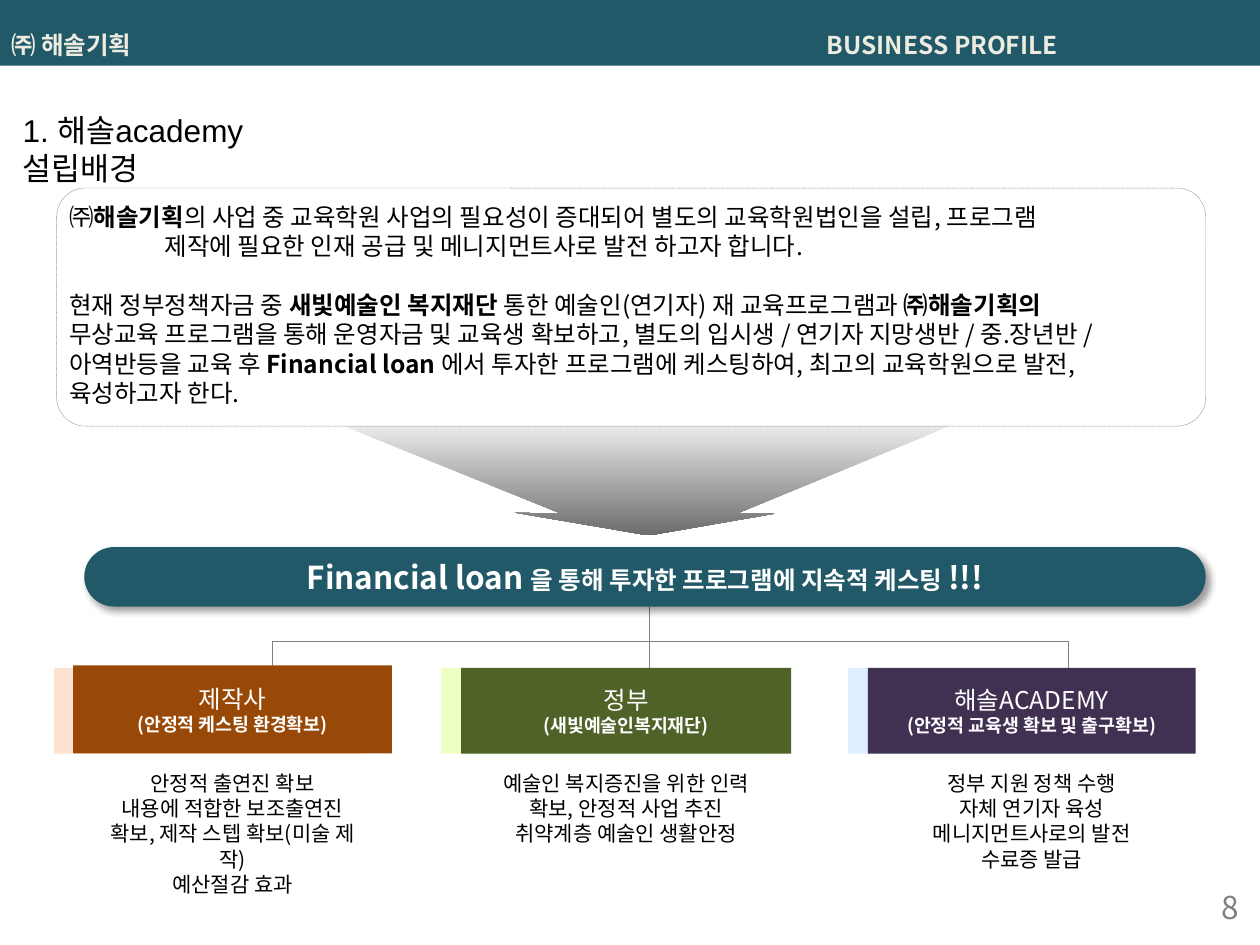
from lxml import etree
from pptx import Presentation
from pptx.dml.color import RGBColor
from pptx.enum.dml import MSO_LINE
from pptx.enum.shapes import MSO_CONNECTOR, MSO_SHAPE
from pptx.enum.text import MSO_ANCHOR, PP_ALIGN
from pptx.oxml.ns import qn
from pptx.util import Pt

RECT, ROUND = MSO_SHAPE.RECTANGLE, MSO_SHAPE.ROUNDED_RECTANGLE
STRAIGHT = MSO_CONNECTOR.STRAIGHT
TOP, MIDDLE, BOTTOM = MSO_ANCHOR.TOP, MSO_ANCHOR.MIDDLE, MSO_ANCHOR.BOTTOM
LEFT, CENTER = PP_ALIGN.LEFT, PP_ALIGN.CENTER
DOTTED = MSO_LINE.ROUND_DOT

COLORS = {
    "teal": "215968", "cream": "EEECE1", "white": "FFFFFF", "black": "000000",
    "gray": "808080", "light": "EAEAEA", "dark": "6C6C6C",
    "brown": "984807", "green": "4F6228", "purple": "403152",
    "orange": "FF6600", "lime": "CCFF33", "sky": "99CCFF",
}


def rgb(name):
    return RGBColor.from_string(COLORS[name])


class Deck:
    font = "Noto Sans CJK KR"
    leading = 1.2

    def __init__(self, width, height):
        self.prs = Presentation()
        self.prs.slide_width, self.prs.slide_height = Pt(width), Pt(height)
        self.s = self.prs.slides.add_slide(self.prs.slide_layouts[6])

    def set_text(self, sp, paragraphs, color="black", align=LEFT, anchor=TOP,
                 wrap=True, font=None):
        """Each paragraph is a list of (text, size, bold) runs."""
        tf = sp.text_frame
        frame = {"word_wrap": wrap, "vertical_anchor": anchor}
        for name, value in frame.items():
            setattr(tf, name, value)
        for i, runs in enumerate(paragraphs):
            p = tf.paragraphs[0] if i == 0 else tf.add_paragraph()
            p.alignment = align
            p.line_spacing = Pt(self.leading * max(size for _, size, _ in runs))
            for text, size, bold in runs:
                style = {"name": font or self.font, "size": Pt(size), "bold": bold}
                for j, line in enumerate(text.split("\n")):
                    if j:
                        p.add_line_break()
                    if line:
                        self.add_text_run(p, line, style, color)
        return tf

    def add_text_run(self, p, text, style, color):
        r = p.add_run()
        r.text = text
        for name, value in style.items():
            setattr(r.font, name, value)
        r.font.color.rgb = rgb(color)
        etree.SubElement(r.font._element, qn("a:ea"), typeface=self.font)

    def text(self, box, paragraphs, **style):
        sp = self.s.shapes.add_textbox(*map(Pt, box))
        return self.set_text(sp, paragraphs, **style)

    def shape(self, kind, box, fill=None, alpha=None, line=None, radius=None):
        sp = self.s.shapes.add_shape(kind, *map(Pt, box))
        sp.shadow.inherit = False
        if radius is not None:
            sp.adjustments[0] = radius
        if fill:
            sp.fill.solid()
            sp.fill.fore_color.rgb = rgb(fill)
        else:
            sp.fill.background()
        if alpha:
            clr = sp._element.spPr.find(qn("a:solidFill")).find(qn("a:srgbClr"))
            etree.SubElement(clr, qn("a:alpha"), val=str(alpha * 1000))
        if line:
            sp.line.color.rgb = rgb(line)
            sp.line.width = Pt(0.25)
            sp.line.dash_style = DOTTED
        else:
            sp.line.fill.background()
        return sp

    def drop_shadow(self, sp, blur, dist, angle, alpha):
        effects = sp._element.spPr.find(qn("a:effectLst"))
        shadow = etree.SubElement(
            effects, qn("a:outerShdw"), blurRad=str(Pt(blur)), dist=str(Pt(dist)),
            dir=str(angle * 60000), algn="tl", rotWithShape="0")
        clr = etree.SubElement(shadow, qn("a:srgbClr"), val=COLORS["black"])
        etree.SubElement(clr, qn("a:alpha"), val=str(alpha * 1000))

    def connector(self, x1, y1, x2, y2):
        c = self.s.shapes.add_connector(STRAIGHT, *map(Pt, (x1, y1, x2, y2)))
        c.line.color.rgb = rgb("gray")
        c.line.width = Pt(0.25)
        etree.SubElement(c._element.spPr, qn("a:effectLst"))

    def gradient_outline(self, points, colors):
        points = [(Pt(x), Pt(y)) for x, y in points]
        fb = self.s.shapes.build_freeform(*points[0], scale=1.0)
        fb.add_line_segments(points[1:], close=True)
        sp = fb.convert_to_shape()
        sp.shadow.inherit = False
        sp.line.fill.background()
        sp.fill.gradient()
        sp.fill.gradient_angle = 270
        for stop, color in zip(sp.fill.gradient_stops, colors):
            stop.color.rgb = rgb(color)

    def card(self, back, front, tint, alpha, fill, title, subtitle):
        self.shape(RECT, back, tint, alpha)
        sp = self.shape(RECT, front, fill)
        self.set_text(sp, [[(title, 14, False)], [(subtitle, 10.5, True)]],
                      color="white", align=CENTER, anchor=MIDDLE, wrap=False)


def main():
    d = Deck(720, 540)

    # Header band and section title
    band = d.shape(RECT, (-0.7, 0, 720.7, 37.5), "teal")
    tf = d.set_text(band, [[("㈜ 해솔기획\tBUSINESS PROFILE", 14, True)]],
                    color="cream", anchor=BOTTOM)
    tabs = etree.SubElement(tf.paragraphs[0]._p.get_or_add_pPr(), qn("a:tabLst"))
    etree.SubElement(tabs, qn("a:tab"), pos=str(Pt(466)), algn="l")
    d.text((5.8, 59.8, 224, 49), [[("1. 해솔academy\n설립배경", 18, False)]],
           wrap=False, font="Arial")
    d.text((683.3, 494, 39.6, 48), [[("8", 18, False)]],
           color="gray", align=CENTER, anchor=MIDDLE)

    # Background statement
    tf = d.text((32.4, 111.6, 656.6, 126), [
        [("㈜", 14, False), ("해솔기획", 14, True),
         ("의 사업 중 교육학원 사업의 필요성이 증대되어 별도의 교육학원법인을 설립, 프로그램",
          14, False)],
        [("제작에 필요한 인재 공급 및 메니지먼트사로 발전 하고자 합니다.", 14, False)],
        [("현재 정부정책자금 중 ", 14, False), ("새빛예술인 복지재단 ", 14, True),
         ("통한 예술인(연기자) 재 교육프로그램과 ", 14, False),
         ("㈜해솔기획의\n", 14, True),
         ("무상교육 프로그램을 통해 운영자금 및 교육생 확보하고, "
          "별도의 입시생 / 연기자 지망생반 / 중.장년반 /\n아역반등을 교육 후 ", 14, False),
         ("Financial loan ", 14, True),
         ("에서 투자한 프로그램에 케스팅하여, 최고의 교육학원으로 발전,\n육성하고자 한다.",
          14, False)],
    ])
    tf.paragraphs[1]._p.get_or_add_pPr().set("marL", str(Pt(54.5)))
    tf.paragraphs[2].space_before = Pt(16.8)

    # Connector tree
    trunk, bus, branches = 370.8, 366.5, (155.5, 610.6)
    d.connector(branches[0], bus, branches[1], bus)
    d.connector(trunk, 347, trunk, 386.6)
    for x in branches:
        d.connector(x, bus, x, 388)

    # Cards: back box, front box, tint, alpha, fill, title, subtitle
    cards = [
        ((31, 381.6, 175.7, 49), (41.8, 380.2, 182.2, 50.4), "orange", 18, "brown",
         "제작사", "(안정적 케스팅 환경확보)"),
        ((252, 381.6, 193, 49), (263.5, 381.6, 188.6, 49), "lime", 30, "green",
         "정부", "(새빛예술인복지재단)"),
        ((484.6, 381.6, 198.7, 49), (496, 381.6, 187.2, 49), "sky", 30, "purple",
         "해솔ACADEMY", "(안정적 교육생 확보 및 출구확보)"),
    ]
    details = [
        ["안정적 출연진 확보", "내용에 적합한 보조출연진",
         "확보, 제작 스텝 확보(미술 제\n작)", "예산절감 효과"],
        ["예술인 복지증진을 위한 인력", "확보, 안정적 사업 추진", "취약계층 예술인 생활안정"],
        ["정부 지원 정책 수행", "자체 연기자 육성", "메니지먼트사로의 발전", "수료증 발급"],
    ]
    for card, lines in zip(cards, details):
        d.card(*card)
        left, _, width, _ = card[1]
        d.text((left, 436.8, width, 65), [[(line, 12, False)] for line in lines],
               align=CENTER)

    # Key message
    pill = d.shape(ROUND, (48.2, 312.6, 640.8, 34), "teal", radius=0.5)
    d.drop_shadow(pill, 4, 3, 45, 40)
    d.set_text(pill, [[("Financial loan ", 18, True),
                       ("을 통해 투자한 프로그램에 지속적 케스팅 ", 14, True),
                       ("!!!", 18, True)]],
               color="white", align=CENTER, anchor=MIDDLE, wrap=False)

    # Funnel arrow and statement frame
    d.gradient_outline([(370.8, 306), (442.4, 293.6), (420.8, 293.6), (542.6, 243.4),
                        (196.6, 243.4), (321, 293.6), (294.5, 293)],
                       ("light", "dark"))
    d.shape(ROUND, (32.4, 107.5, 656.6, 136), line="gray", radius=0.12)

    d.prs.save("out.pptx")


if __name__ == "__main__":
    main()
